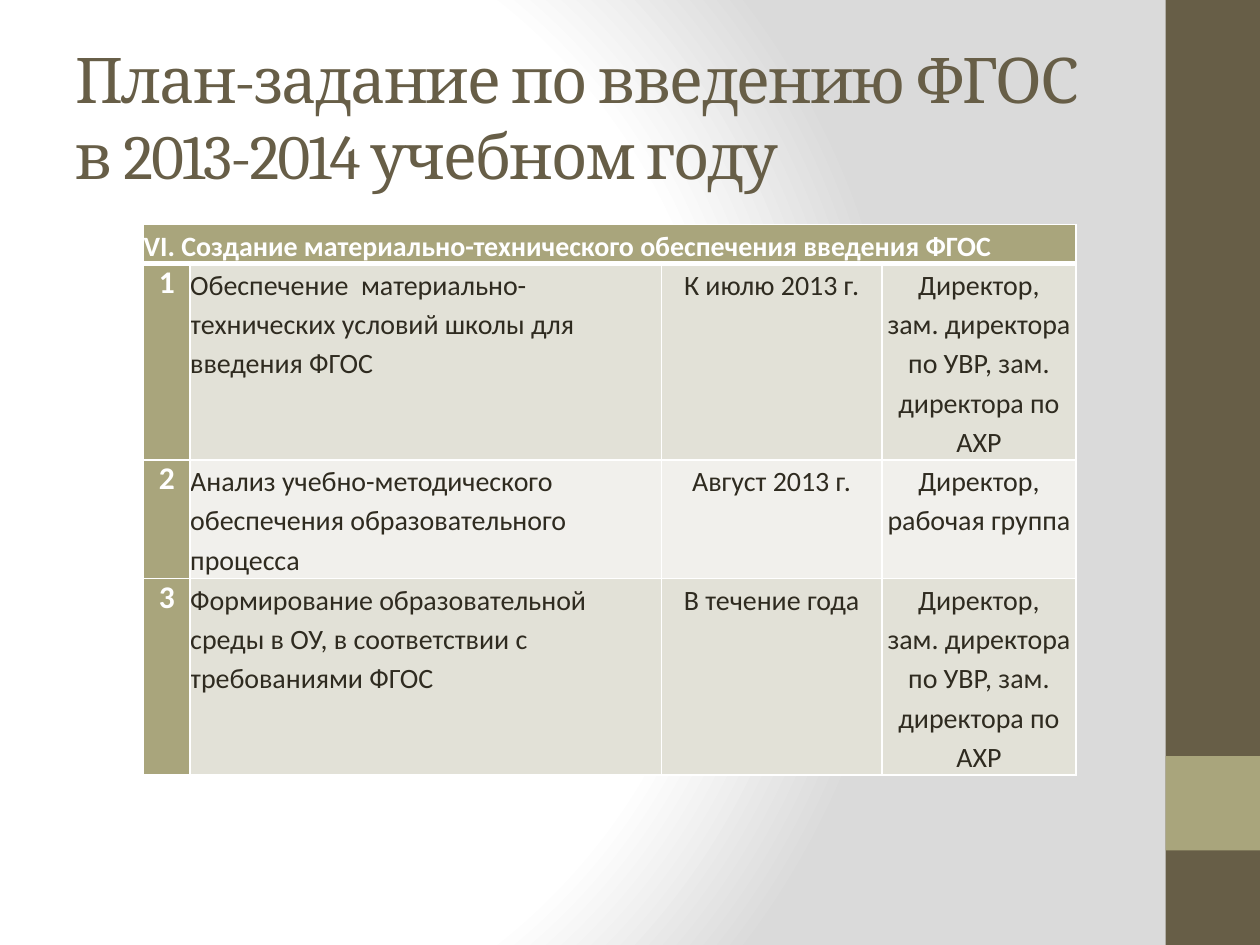
"""Build a slide with the school plan table for the 2013-2014 year."""
import pptx
import pptx.dml.color
import pptx.enum.shapes
import pptx.enum.text
import pptx.oxml
import pptx.oxml.ns
import pptx.util

COLORS = {
    "brown": "675E47", "olive": "A9A57C", "text": "2F2B20", "white": "FFFFFF",
    "odd": "E2E1D7", "even": "F1F0EC", "grey": "DADADA",
}
FORMATS = {
    "title": {"name": "Cambria", "size": pptx.util.Pt(36), "bold": False},
    "header": {"name": "Calibri", "size": pptx.util.Pt(16), "bold": True},
    "number": {"name": "Calibri", "size": pptx.util.Pt(18), "bold": True},
    "body": {"name": "Calibri", "size": pptx.util.Pt(16), "bold": False},
}
NAMESPACE = pptx.oxml.ns.nsdecls("a")
LEFT, CENTER = pptx.enum.text.PP_ALIGN.LEFT, pptx.enum.text.PP_ALIGN.CENTER
COLUMNS = [0.37, 3.74, 1.75, 1.54]
ROWS = [0.31, 1.56, 0.94, 1.56]
STAFF = "Директор,\nзам. директора по УВР, зам. директора по АХР"
PLAN = [
    ["VI. Создание материально-технического обеспечения введения ФГОС", "", "", ""],
    ["1", "Обеспечение  материально-технических условий школы для введения ФГОС",
     "К июлю 2013 г.", STAFF],
    ["2", "Анализ учебно-методического обеспечения образовательного процесса",
     "Август 2013 г.", "Директор, рабочая группа"],
    ["3", "Формирование образовательной среды в ОУ, в соответствии с требованиями ФГОС",
     "В течение года", STAFF],
]


def write(frame, text, style, color, align, spacing):
    for index, line in enumerate(text.split("\n")):
        para = frame.add_paragraph() if index else frame.paragraphs[0]
        para.alignment, para.line_spacing = align, spacing
        span = para.add_run()
        span.text = line
        for key, value in FORMATS[style].items():
            setattr(span.font, key, value)
        span.font.color.rgb = pptx.dml.color.RGBColor.from_string(COLORS[color])


def paint(fill, color):
    fill.solid()
    fill.fore_color.rgb = pptx.dml.color.RGBColor.from_string(COLORS[color])


deck = pptx.Presentation()
deck.slide_width, deck.slide_height = pptx.util.Inches(10), pptx.util.Inches(7.5)
width, height = deck.slide_width, deck.slide_height
page = deck.slides.add_slide(deck.slide_layouts[6])

paint(page.background.fill, "white")
solid = page.element.find(".//" + pptx.oxml.ns.qn("a:solidFill"))
stops = "".join(
    f'<a:gs pos="{share * 1000}"><a:srgbClr val="{COLORS[color]}"/></a:gs>'
    for share, color in [(0, "white"), (75, "white"), (100, "grey")]
)
gradient = pptx.oxml.parse_xml(
    f'<a:gradFill {NAMESPACE} rotWithShape="1"><a:gsLst>{stops}</a:gsLst><a:path path="circle">'
    '<a:fillToRect l="20000" t="50000" r="100000" b="50000"/></a:path></a:gradFill>'
)
solid.getparent().replace(solid, gradient)

for top, share, color in [(0, 1, "brown"), (0.8, 0.1, "olive")]:
    band = page.shapes.add_shape(
        pptx.enum.shapes.MSO_SHAPE.RECTANGLE, int(width * 0.925), int(height * top),
        int(width * 0.075), int(height * share))
    band.shadow.inherit = False
    paint(band.fill, color)
    band.line.fill.background()

box = page.shapes.add_textbox(
    int(width * 0.05), int(height * 0.04), int(width * 0.833), pptx.util.Inches(1.25))
box.text_frame.word_wrap = True
box.text_frame.vertical_anchor = pptx.enum.text.MSO_ANCHOR.MIDDLE
write(box.text_frame, "План-задание по введению ФГОС в 2013-2014 учебном году",
      "title", "brown", LEFT, None)
box.text_frame.paragraphs[0].runs[0].font._element.set("spc", "-100")

table = page.shapes.add_table(
    len(ROWS), len(COLUMNS), int(width * 0.114), pptx.util.Inches(1.78),
    pptx.util.Inches(sum(COLUMNS)), pptx.util.Inches(sum(ROWS))).table
table.first_row = table.horz_banding = False
for column, size in zip(table.columns, COLUMNS):
    column.width = pptx.util.Inches(size)
for row, size in zip(table.rows, ROWS):
    row.height = pptx.util.Inches(size)
table.cell(0, 0).merge(table.cell(0, 3))

for r, texts in enumerate(PLAN):
    for c, text in enumerate(texts):
        cell = table.cell(r, c)
        for side in ["left", "top", "right", "bottom"]:
            setattr(cell, "margin_" + side, 0)
        thick = {"B": 3} if r == 0 else {"T": 3} if r == 1 else {}
        properties = cell._tc.get_or_add_tcPr()
        for side in "LRTB":
            properties.append(pptx.oxml.parse_xml(
                f'<a:ln{side} {NAMESPACE} w="{thick.get(side, 1) * 12700}"><a:solidFill>'
                f'<a:srgbClr val="{COLORS["white"]}"/></a:solidFill></a:ln{side}>'))
        paint(cell.fill, "olive" if r == 0 or c == 0 else "odd" if r % 2 else "even")
        if text:
            style = "header" if r == 0 else "number" if c == 0 else "body"
            write(cell.text_frame, text, style, "text" if style == "body" else "white",
                  LEFT if r == 0 or c == 1 else CENTER, None if style == "number" else 1.15)

deck.save("out.pptx")
